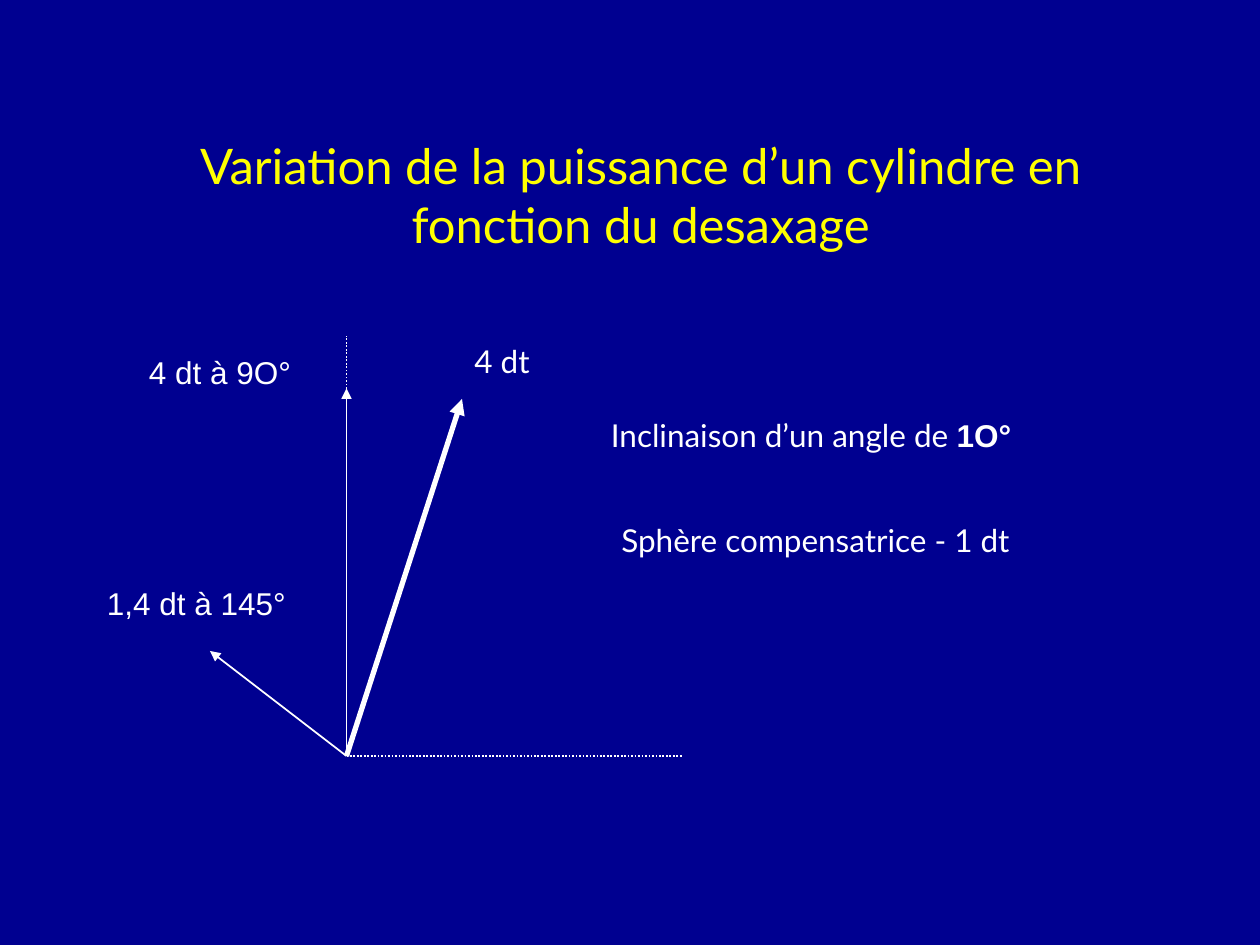
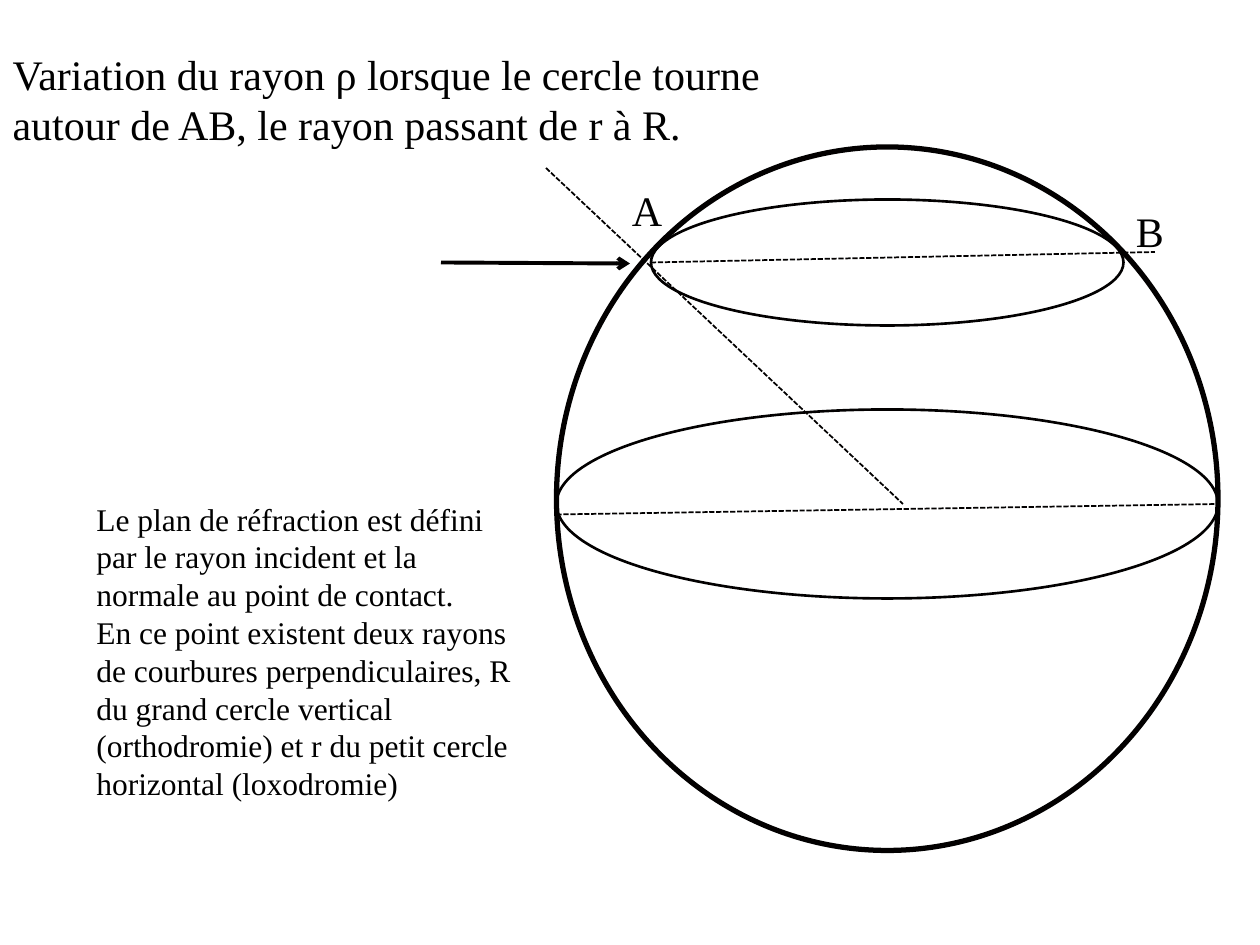
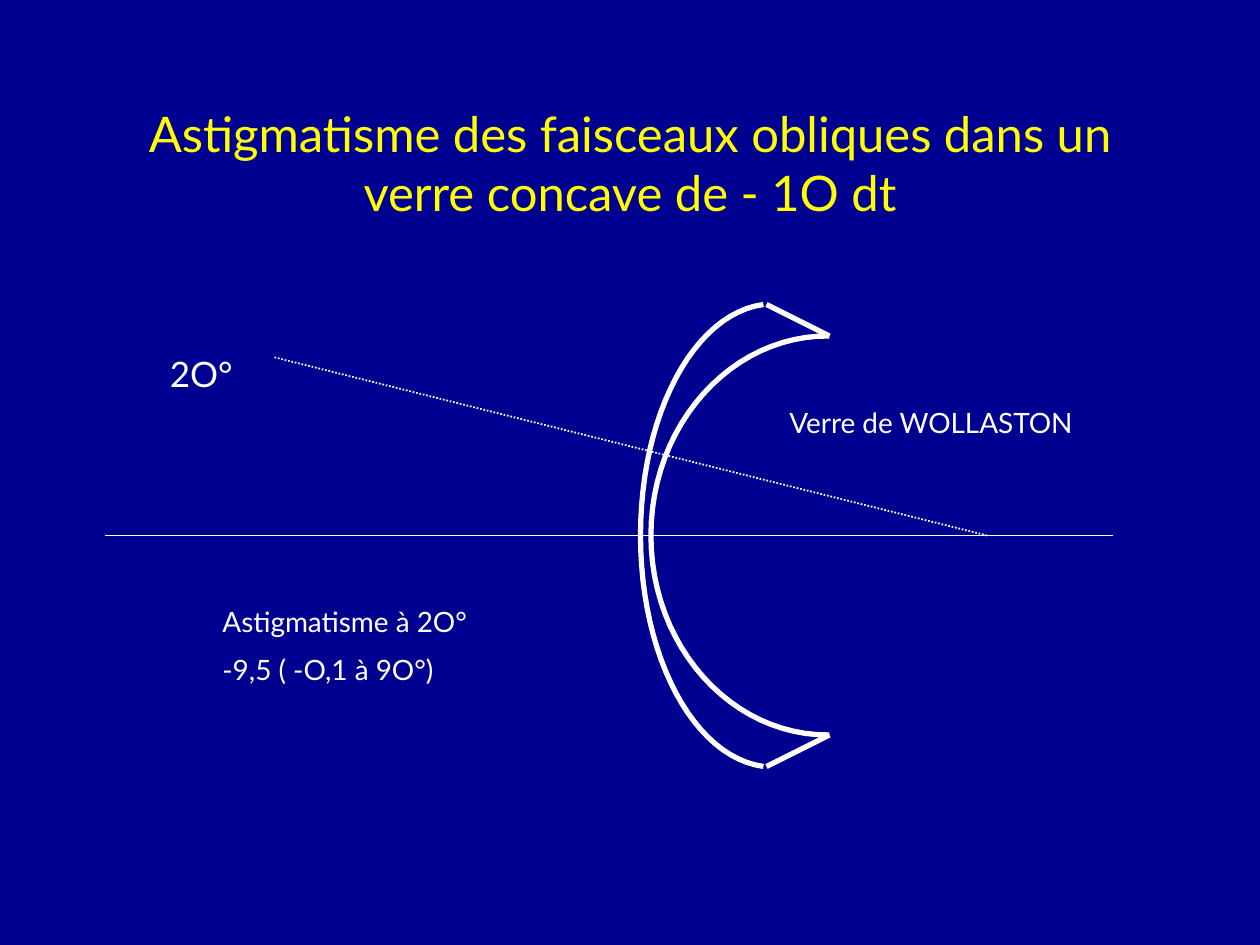
"""Build three slides on lens power, sphere radii and oblique astigmatism."""
from dataclasses import dataclass

from lxml import etree
from pptx import Presentation
from pptx import util as u
from pptx.dml.color import RGBColor
from pptx.enum import dml, shapes, text
from pptx.oxml.ns import qn

PX = 7620
TITLE_ONLY = 5
DOTS = dml.MSO_LINE.ROUND_DOT
DASHES = dml.MSO_LINE.SQUARE_DOT


@dataclass(frozen=True)
class Theme:
    """Colours, fonts and type sizes of the slides."""
    navy: str = "000090"
    white: str = "FFFFFF"
    yellow: str = "FFFF00"
    black: str = "000000"
    ink: str = "020000"
    lato: str = "Lato"
    arial: str = "Arial"
    serif: str = "Times New Roman"
    title: int = 28
    heading: int = 24
    angle: int = 20
    body: int = 18
    small: int = 16


T = Theme()


def px(n):
    """Turn px into EMU."""
    return u.Emu(round(n * PX))


def style_run(r, font, size, color, bold=False):
    """Format one run."""
    r.font.name = font
    r.font.size = u.Pt(size)
    r.font.bold = bold
    r.font.color.rgb = RGBColor.from_string(color)


def style_line(sp, color, width, dash=None):
    """Format an outline."""
    sp.line.color.rgb = RGBColor.from_string(color)
    sp.line.width = u.Pt(width)
    if dash is not None:
        sp.line.dash_style = dash


def add_slide(prs, background):
    """Add a title-only slide with a plain background."""
    s = prs.slides.add_slide(prs.slide_layouts[TITLE_ONLY])
    s.background.fill.solid()
    s.background.fill.fore_color.rgb = RGBColor.from_string(background)
    return s


def set_title(s, box, words, font=T.lato, size=T.title, color=T.yellow,
              align=text.PP_ALIGN.CENTER, anchor=text.MSO_ANCHOR.MIDDLE):
    """Place and format the title placeholder."""
    sp = s.shapes.title
    sp.left, sp.top, sp.width, sp.height = map(px, box)
    tf = sp.text_frame
    tf.text = words
    tf.word_wrap = True
    tf.auto_size = text.MSO_AUTO_SIZE.NONE
    tf.vertical_anchor = anchor
    p = tf.paragraphs[0]
    p.alignment = align
    style_run(p.runs[0], font, size, color)


def add_label(s, box, words, font=T.lato, size=T.body, color=T.white,
              gap=0, wrap=True):
    """Add a text box with one paragraph per line of words."""
    tf = s.shapes.add_textbox(*map(px, box)).text_frame
    tf.text = words
    tf.word_wrap = wrap
    tf.auto_size = text.MSO_AUTO_SIZE.SHAPE_TO_FIT_TEXT
    for i, p in enumerate(tf.paragraphs):
        p.space_before = u.Pt(gap if i else 0)
        style_run(p.runs[0], font, size, color)
    return tf


def add_line(s, start, end, color=T.white, width=1, dash=None, arrow=None):
    """Add a straight line, with an arrowhead at its end if named."""
    sp = s.shapes.add_connector(shapes.MSO_CONNECTOR.STRAIGHT,
                                *map(px, (*start, *end)))
    style_line(sp, color, width, dash)
    if arrow:
        etree.SubElement(sp.line._get_or_add_ln(), qn("a:tailEnd"), type=arrow)
    etree.SubElement(sp._element.spPr, qn("a:effectLst"))


def add_ellipse(s, box, width):
    """Add an unfilled ellipse."""
    sp = s.shapes.add_shape(shapes.MSO_SHAPE.OVAL, *map(px, box))
    sp.shadow.inherit = False
    sp.fill.background()
    style_line(sp, T.ink, width)


def add_lens_face(s, axis, rim, pull, bend, vertex):
    """Add a lens face: a Bézier from rim to vertex, mirrored in the axis."""
    steps = 24
    upper = []
    for i in range(steps + 1):
        t = i / steps
        weights = ((1 - t) ** 3, 3 * t * (1 - t) ** 2, 3 * t * t * (1 - t), t ** 3)
        upper.append([sum(w * q[k] for w, q in zip(weights, (rim, pull, bend, vertex)))
                      for k in (0, 1)])
    lower = [(x, 2 * axis - y) for x, y in reversed(upper[:-1])]
    points = upper + lower
    fb = s.shapes.build_freeform(px(points[0][0]), px(points[0][1]), scale=1.0)
    fb.add_line_segments([(px(x), px(y)) for x, y in points[1:]], close=False)
    sp = fb.convert_to_shape()
    sp.shadow.inherit = False
    sp.fill.background()
    style_line(sp, T.white, 3)


def cylinder_slide(prs):
    """Show how tilting a cylinder changes its power."""
    s = add_slide(prs, T.navy)
    set_title(s, (100, 110, 1020, 150),
              "Variation de la puissance d’un cylindre en fonction du desaxage")
    origin = (330, 720)
    add_line(s, origin, (330, 370), arrow="triangle")
    add_line(s, origin, (440, 380), width=3, arrow="triangle")
    add_line(s, origin, (200, 620), arrow="triangle")
    add_line(s, origin, (650, 720), dash=DOTS)
    add_line(s, (330, 410), (330, 320), dash=DOTS)
    tf = add_label(s, (570, 390, 570, 48), "Inclinaison d’un angle de ")
    r = tf.paragraphs[0].add_run()
    r.text = "1Ο°"
    style_run(r, T.arial, T.body, T.white, bold=True)
    add_label(s, (440, 320, 150, 48), "4 dt")
    add_label(s, (130, 330, 220, 48), "4 dt à 9O°", T.arial)
    add_label(s, (90, 550, 310, 48), "1,4 dt à 145°", T.arial)
    add_label(s, (580, 490, 550, 48), "Sphère compensatrice - 1 dt")


def sphere_slide(prs):
    """Show the two radii of curvature on a sphere."""
    s = add_slide(prs, T.white)
    set_title(s, (0, 40, 790, 109),
              "Variation du rayon ρ lorsque le cercle tourne autour de AB, "
              "le rayon passant de r à R.",
              T.serif, T.heading, T.black,
              text.PP_ALIGN.LEFT, text.MSO_ANCHOR.TOP)
    add_ellipse(s, (530, 140, 630, 670), 3)
    add_ellipse(s, (530, 390, 630, 180), 1.5)
    add_ellipse(s, (620, 190, 450, 120), 1.5)
    for start, end in (((620, 250), (1100, 240)),
                       ((520, 160), (860, 480)),
                       ((530, 490), (1160, 480))):
        add_line(s, start, end, T.ink, dash=DASHES)
    add_line(s, (420, 250), (600, 251), T.ink, 2.25, arrow="arrow")
    add_label(s, (80, 470, 430, 302),
              "Le plan de réfraction est défini par le rayon incident et la "
              "normale au point de contact.\n"
              "En ce point existent deux rayons de courbures perpendiculaires, "
              "R du grand cercle vertical (orthodromie) et r du petit cercle "
              "horizontal (loxodromie)", T.serif, T.body, T.black)
    for name, x, y in (("A", 590, 170), ("B", 1070, 190)):
        add_label(s, (x, y, 40, 109), name, T.serif, T.heading, T.black)


def lens_slide(prs):
    """Show oblique astigmatism in a concave lens."""
    s = add_slide(prs, T.navy)
    set_title(s, (90, 80, 1020, 150),
              "Astigmatisme des faisceaux obliques dans un verre concave de - 1O dt")
    axis = 510
    add_line(s, (100, axis), (1060, axis))
    add_lens_face(s, axis, (727, 290), (661, 299), (610, 394), (610, axis))
    add_lens_face(s, axis, (790, 320), (697, 319), (620, 404), (620, axis))
    add_line(s, (940, axis), (260, 340), dash=DOTS)
    for side in (-1, 1):
        add_line(s, (730, axis + side * 220), (790, axis + side * 190), width=3)
    add_label(s, (740, 380, 460, 46), "Verre de WOLLASTON", size=T.small)
    add_label(s, (200, 570, 308, 96), "Astigmatisme à 2O°\n-9,5 ( -O,1 à 9O°)",
              size=T.small, gap=8, wrap=False)
    add_label(s, (150, 330, 120, 54), "2O°", size=T.angle)


def main():
    """Build and save the presentation."""
    prs = Presentation()
    prs.slide_width, prs.slide_height = px(1200), px(900)
    cylinder_slide(prs)
    sphere_slide(prs)
    lens_slide(prs)
    prs.save("out.pptx")


if __name__ == "__main__":
    main()
